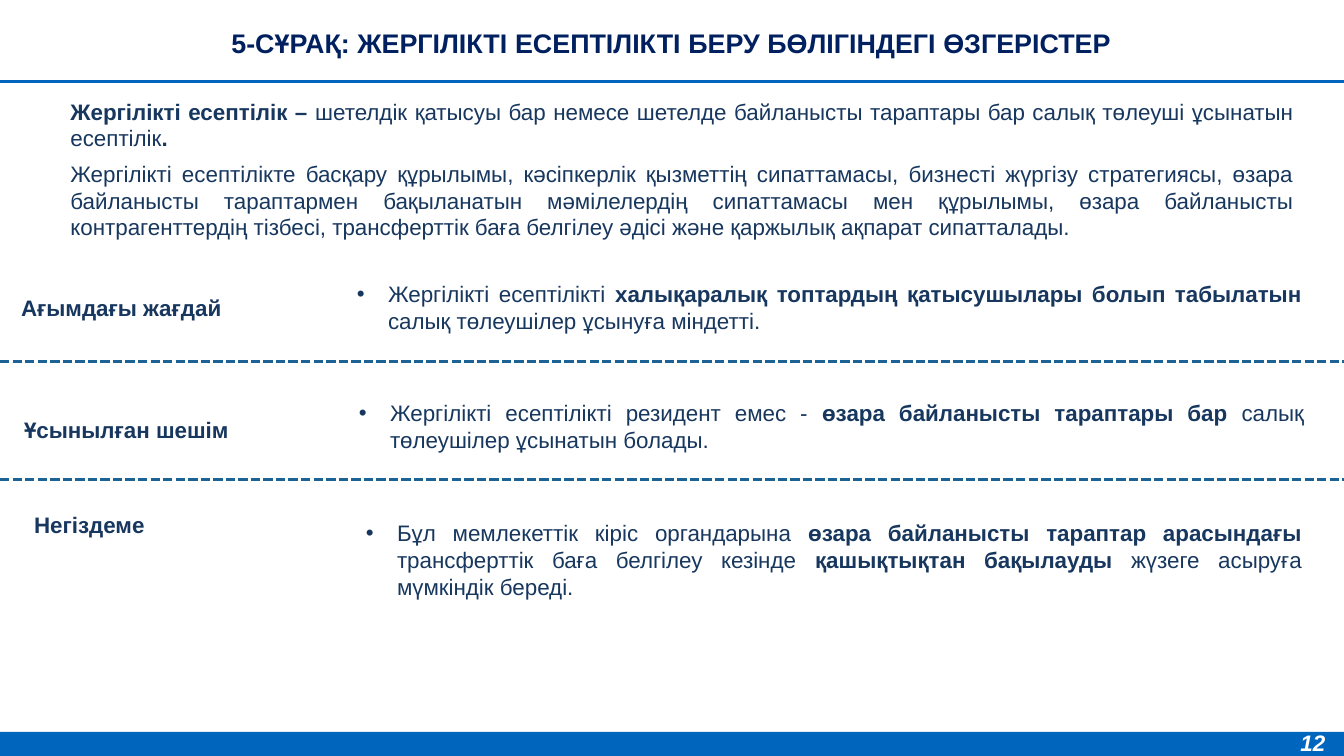
from dataclasses import dataclass
from lxml.etree import SubElement
from pptx import Presentation
from pptx.dml.color import RGBColor
from pptx.enum.dml import MSO_LINE
from pptx.enum.shapes import MSO_CONNECTOR, MSO_SHAPE
from pptx.enum.text import MSO_ANCHOR, MSO_AUTO_SIZE, PP_ALIGN
from pptx.oxml.ns import qn
from pptx.util import Emu, Inches, Pt


@dataclass(frozen=True)
class Theme:
    font: str = "Arial"
    title: str = "002060"
    text: str = "17375E"
    accent: str = "0065BD"
    dash: str = "1D6294"
    light: str = "FFFFFF"
    title_size: int = 24
    text_size: int = 16
    line_width: float = 2.25
    space_before: int = 6
    indent: float = 0.31


T = Theme()
W, H = Inches(13.33), Inches(7.5)

# Rows: band top and height, label box and text box within the band, in percent
ROWS = [
    ((33.6, 14.27), (0.83, 4.67, 20), (25.81, 2.8, 71.8, 8.53), T.space_before, True,
     "Ағымдағы жағдай",
     "Жергілікті есептілікті *халықаралық топтардың қатысушылары болып табылатын *"
     "салық төлеушілер ұсынуға міндетті."),
    ((47.87, 15.6), (1.05, 6.53, 20), (25.96, 4.26, 71.8, 8.53), 0, True,
     "Ұсынылған шешім",
     "Жергілікті есептілікті резидент емес - *өзара байланысты тараптары бар *"
     "салық төлеушілер ұсынатын болады."),
    ((63.47, 33.33), (1.8, 3.46, 14.7), (26.48, 4.53, 71.12, 12.13), T.space_before, False,
     "Негіздеме",
     "Бұл мемлекеттік кіріс органдарына *өзара байланысты тараптар арасындағы *"
     "трансферттік баға белгілеу кезінде *қашықтықтан бақылауды *"
     "жүзеге асыруға мүмкіндік береді."),
]
LABEL_H = 4.93

DEFINITION = [
    "*Жергілікті есептілік – *шетелдік қатысуы бар немесе шетелде байланысты "
    "тараптары бар салық төлеуші ұсынатын есептілік*.*",
    "Жергілікті есептілікте басқару құрылымы, кәсіпкерлік қызметтің сипаттамасы, "
    "бизнесті жүргізу стратегиясы, өзара байланысты тараптармен бақыланатын "
    "мәмілелердің сипаттамасы мен құрылымы, өзара байланысты контрагенттердің "
    "тізбесі, трансферттік баға белгілеу әдісі және қаржылық ақпарат сипатталады.",
]


def place(x, y, w, h):
    """Turn percentages of the slide into lengths."""
    return [Emu(round(v * side / 100)) for v, side in ((x, W), (y, H), (w, W), (h, H))]


def set_all(obj, values):
    for name, value in values.items():
        setattr(obj, name, value)


def add_bullet(p):
    pPr = p._p.get_or_add_pPr()
    indent = Inches(T.indent)
    pPr.set("marL", str(indent))
    pPr.set("indent", str(-indent))
    SubElement(pPr, qn("a:buFont")).set("typeface", T.font)
    SubElement(pPr, qn("a:buChar")).set("char", "•")


def add_text(s, box, paragraphs, align=PP_ALIGN.LEFT, anchor=MSO_ANCHOR.TOP, before=0,
             size=T.text_size, color=T.text, italic=False, bullet=False, caps=False,
             fit=MSO_AUTO_SIZE.SHAPE_TO_FIT_TEXT):
    """Add a text box; the parts between asterisks are bold."""
    tf = s.shapes.add_textbox(*place(*box)).text_frame
    set_all(tf, {"word_wrap": True, "auto_size": fit, "vertical_anchor": anchor})
    for i, text in enumerate(paragraphs):
        p = tf.add_paragraph() if i else tf.paragraphs[0]
        set_all(p, {"alignment": align, "space_before": Pt(before)})
        if bullet:
            add_bullet(p)
        for j, part in enumerate(text.split("*")):
            if not part:
                continue
            r = p.add_run()
            r.text = part
            set_all(r.font, {"name": T.font, "size": Pt(size), "bold": j % 2 == 1,
                             "italic": italic})
            r.font.color.rgb = RGBColor.from_string(color)
            if caps:
                r._r.get_or_add_rPr().set("cap", "small")


def add_rule(s, y, color, dash=None):
    x, top, w, _ = place(0, y, 100, 0)
    line = s.shapes.add_connector(MSO_CONNECTOR.STRAIGHT, x, top, x + w, top)
    line.line.color.rgb = RGBColor.from_string(color)
    set_all(line.line, {"width": Pt(T.line_width), "dash_style": dash})
    SubElement(line._element.spPr, qn("a:effectLst"))


def add_header(s, x, y, w, h):
    add_rule(s, y + h, T.accent)
    add_text(s, (x + 1.43, y, w - 3, h - 0.27),
             ["*5-сұрақ: жергілікті есептілікті беру бөлігіндегі өзгерістер*"],
             align=PP_ALIGN.CENTER, anchor=MSO_ANCHOR.MIDDLE, size=T.title_size,
             color=T.title, caps=True, fit=MSO_AUTO_SIZE.NONE)


def add_footer(s, x, y, w, h):
    bar = s.shapes.add_shape(MSO_SHAPE.RECTANGLE, *place(x, y, w, h))
    bar.shadow.inherit = False
    bar.fill.solid()
    bar.fill.fore_color.rgb = RGBColor.from_string(T.accent)
    bar.line.fill.background()
    add_text(s, (x + 96.02, y - 1.07, 3.45, LABEL_H), ["*12*"], color=T.light, italic=True)


def add_row(s, top, height, label_box, text_box, before, ruled, label, text):
    lx, ly, lw = label_box
    tx, ty, tw, th = text_box
    add_text(s, (lx, top + ly, lw, LABEL_H), [f"*{label}*"], anchor=MSO_ANCHOR.MIDDLE)
    add_text(s, (tx, top + ty, tw, th), [text], align=PP_ALIGN.JUSTIFY,
             before=before, bullet=True)
    if ruled:
        add_rule(s, top + height, T.dash, MSO_LINE.SQUARE_DOT)


def main():
    prs = Presentation()
    set_all(prs, {"slide_width": W, "slide_height": H})
    s = prs.slides.add_slide(prs.slide_layouts[6])
    # Header and footer
    add_header(s, 0, 0, 100, 10.8)
    add_footer(s, 0, 96.8, 100, 3.2)
    # Definition of local reporting
    add_text(s, (4.5, 12.27, 92.5, 20.4), DEFINITION, align=PP_ALIGN.JUSTIFY,
             before=T.space_before)
    # Current state, proposal and rationale
    for band, *parts in ROWS:
        add_row(s, *band, *parts)
    prs.save("out.pptx")


if __name__ == "__main__":
    main()
